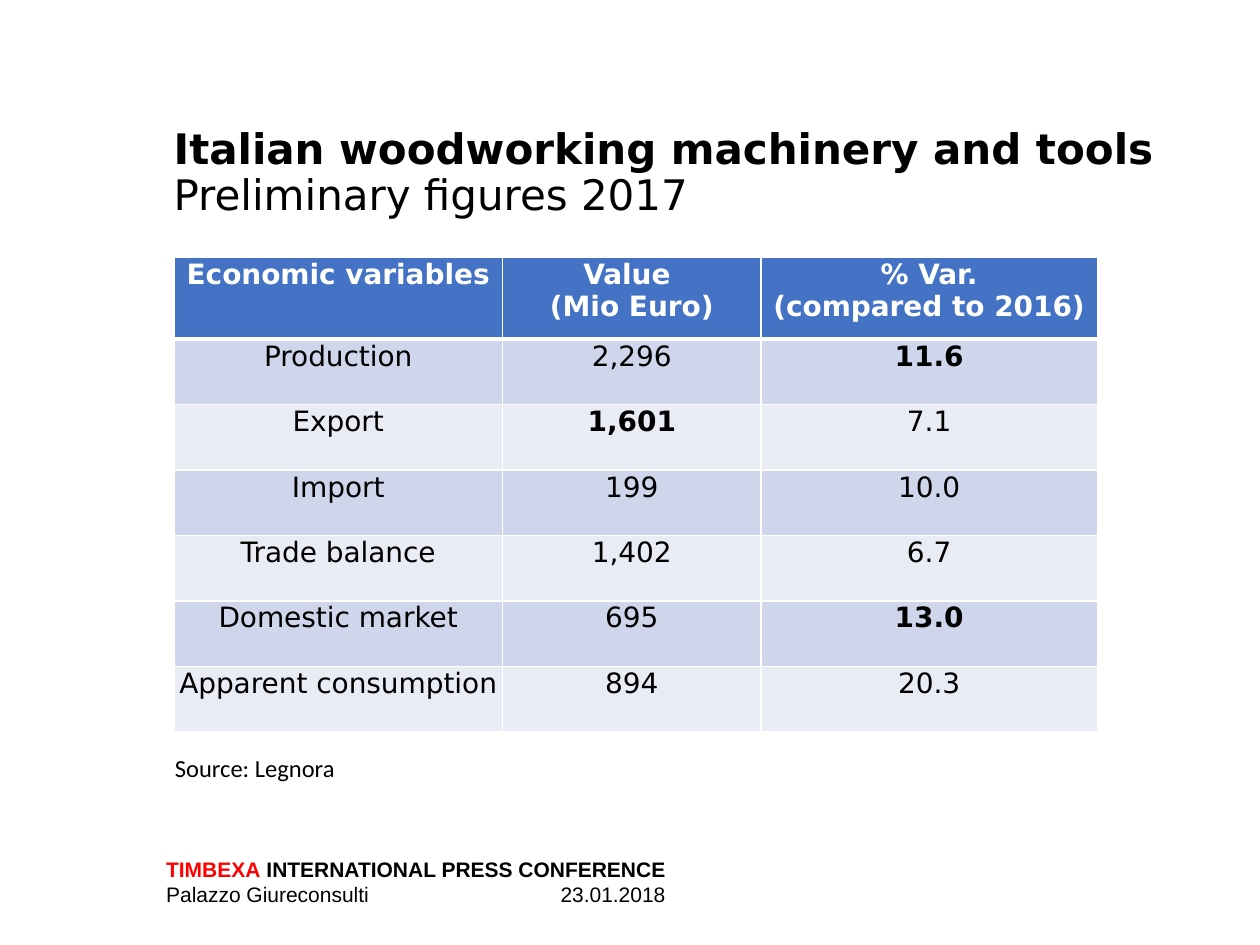
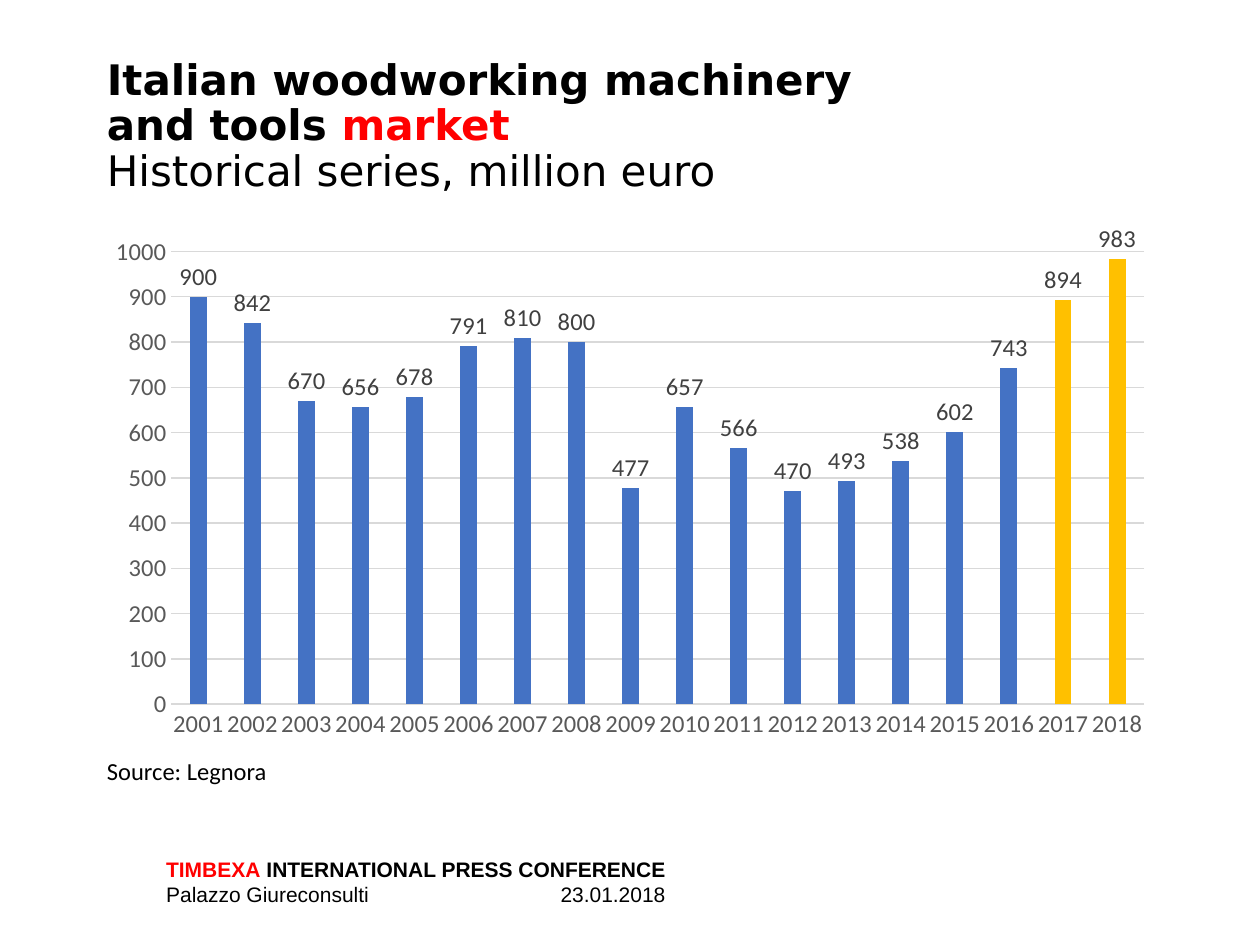
from lxml import etree
from pptx import Presentation
from pptx import util as u
from pptx.chart import data
from pptx.dml.color import RGBColor
from pptx.enum import chart as ch, text as tx
from pptx.oxml import ns

BLACK, WHITE, RED = "000000", "FFFFFF", "FF0000"
BLUE, GOLD, GRID = "4472C4", "FFC000", "D9D9D9"
BANDS = ["E9EBF5", "CFD5EA"]
HEAD = "DejaVu Sans"


def style(font, face, size, shade, bold=False):
    font.name, font.size, font.bold = face, u.Pt(size), bold
    font.color.rgb = RGBColor.from_string(shade)


def write(slide, place, lines, face, size, space=1.0, tab=None):
    """Add a text box; each line is a list of (text, colour, bold) runs."""
    box = slide.shapes.add_textbox(*[u.Inches(n) for n in place])
    frame = box.text_frame
    frame.word_wrap = True
    for i, line in enumerate(lines):
        para = frame.add_paragraph() if i else frame.paragraphs[0]
        para.line_spacing = space
        if tab:
            stops = etree.SubElement(para._p.get_or_add_pPr(), ns.qn("a:tabLst"))
            etree.SubElement(stops, ns.qn("a:tab"), pos=str(u.Inches(tab)), algn="l")
        for words, shade, bold in line:
            run = para.add_run()
            run.text = words
            style(run.font, face, size, shade, bold)


deck = Presentation()
deck.slide_width, deck.slide_height = u.Inches(10), u.Inches(7.5)

# Titles, sources and footers
titles = [
    ((1.28, 0.97, 9, 1.21), [
        [("Italian woodworking machinery and tools", BLACK, True)],
        [("Preliminary figures 2017", BLACK, False)]]),
    ((0.75, 0.42, 9.06, 1.21), [
        [("Italian woodworking machinery", BLACK, True)],
        [("and tools ", BLACK, True), ("market", RED, True)],
        [("Historical series, million euro", BLACK, False)]]),
]
sources = [(1.29, 5.93, 2.76, 0.34), (0.75, 5.95, 2.28, 0.34)]
footer = [
    [("TIMBEXA", RED, True), (" INTERNATIONAL PRESS CONFERENCE", BLACK, True)],
    [("Palazzo Giureconsulti\t23.01.2018", BLACK, False)],
]
for (place, lines), source in zip(titles, sources):
    slide = deck.slides.add_slide(deck.slide_layouts[6])
    write(slide, (1.22, 6.75, 4.65, 0.51), footer, "Arial", 12, tab=3.13)
    write(slide, place, lines, HEAD, 24, space=0.9)
    write(slide, source, [[("Source: Legnora", BLACK, False)]], "Calibri", 14)
first, second = deck.slides

# Table of preliminary figures
rows = [
    ("Economic variables", "Value \n(Mio Euro)", "% Var.\n(compared to 2016)"),
    ("Production", "2,296", "11.6"),
    ("Export", "1,601", "7.1"),
    ("Import", "199", "10.0"),
    ("Trade balance", "1,402", "6.7"),
    ("Domestic market", "695", "13.0"),
    ("Apparent consumption", "894", "20.3"),
]
strong = {"11.6", "1,601", "13.0"}
table = first.shapes.add_table(
    len(rows), 3, u.Inches(1.38), u.Inches(2.04), u.Inches(7.33), u.Inches(3.77)).table
for col, width in zip(table.columns, (2.61, 2.05, 2.67)):
    col.width = u.Inches(width)
for r, row in enumerate(rows):
    table.rows[r].height = u.Inches(0.52 if r else 0.65)
    for c, words in enumerate(row):
        cell = table.cell(r, c)
        cell.margin_left = cell.margin_right = cell.margin_top = u.Inches(0.01)
        cell.margin_bottom = 0
        props = cell._tc.get_or_add_tcPr()
        for side in "LRTB":
            thick = (r == 0 and side == "B") or (r == 1 and side == "T")
            edge = etree.SubElement(
                props, ns.qn("a:ln" + side), w=str(u.Pt(3 if thick else 1)))
            fill = etree.SubElement(edge, ns.qn("a:solidFill"))
            etree.SubElement(fill, ns.qn("a:srgbClr"), val=WHITE)
        cell.fill.solid()
        cell.fill.fore_color.rgb = RGBColor.from_string(BANDS[r % 2] if r else BLUE)
        cell.text_frame.text = words
        for para in cell.text_frame.paragraphs:
            para.alignment = tx.PP_ALIGN.CENTER
            for run in para.runs:
                style(run.font, HEAD, 16, BLACK if r else WHITE, r == 0 or words in strong)

# Chart of the market by year
market = [900, 842, 670, 656, 678, 791, 810, 800, 477,
          657, 566, 470, 493, 538, 602, 743, 894, 983]
series = data.CategoryChartData()
series.categories = [str(2001 + i) for i in range(len(market))]
series.add_series("Series 1", market)
chart = second.shapes.add_chart(
    ch.XL_CHART_TYPE.COLUMN_CLUSTERED, u.Inches(0.75), u.Inches(1.78),
    u.Inches(8.5), u.Inches(4.17), series).chart
chart.has_legend = chart.has_title = False
style(chart.font, "Calibri", 10, BLACK)

years, scale = chart.category_axis, chart.value_axis
for axis in (years, scale):
    axis.major_tick_mark = axis.minor_tick_mark = ch.XL_TICK_MARK.NONE
    style(axis.tick_labels.font, "Calibri", 14, "595959")
scale.minimum_scale, scale.maximum_scale, scale.major_unit = 0, 1000, 100
scale.has_major_gridlines = True
scale.format.line.fill.background()
for line in (years.format.line, scale.major_gridlines.format.line):
    line.color.rgb = RGBColor.from_string(GRID)
    line.width = u.Pt(0.75)

plot = chart.plots[0]
plot.gap_width, plot.overlap, plot.vary_by_categories = 219, -27, False
bars = plot.series[0]
bars.format.fill.solid()
bars.format.fill.fore_color.rgb = RGBColor.from_string(BLUE)
for i in (16, 17):
    fill = bars.points[i].format.fill
    fill.solid()
    fill.fore_color.rgb = RGBColor.from_string(GOLD)
labels = bars.data_labels
labels.show_value = True
labels.position = ch.XL_LABEL_POSITION.OUTSIDE_END
style(labels.font, "Calibri", 14, "404040")

deck.save("out.pptx")
